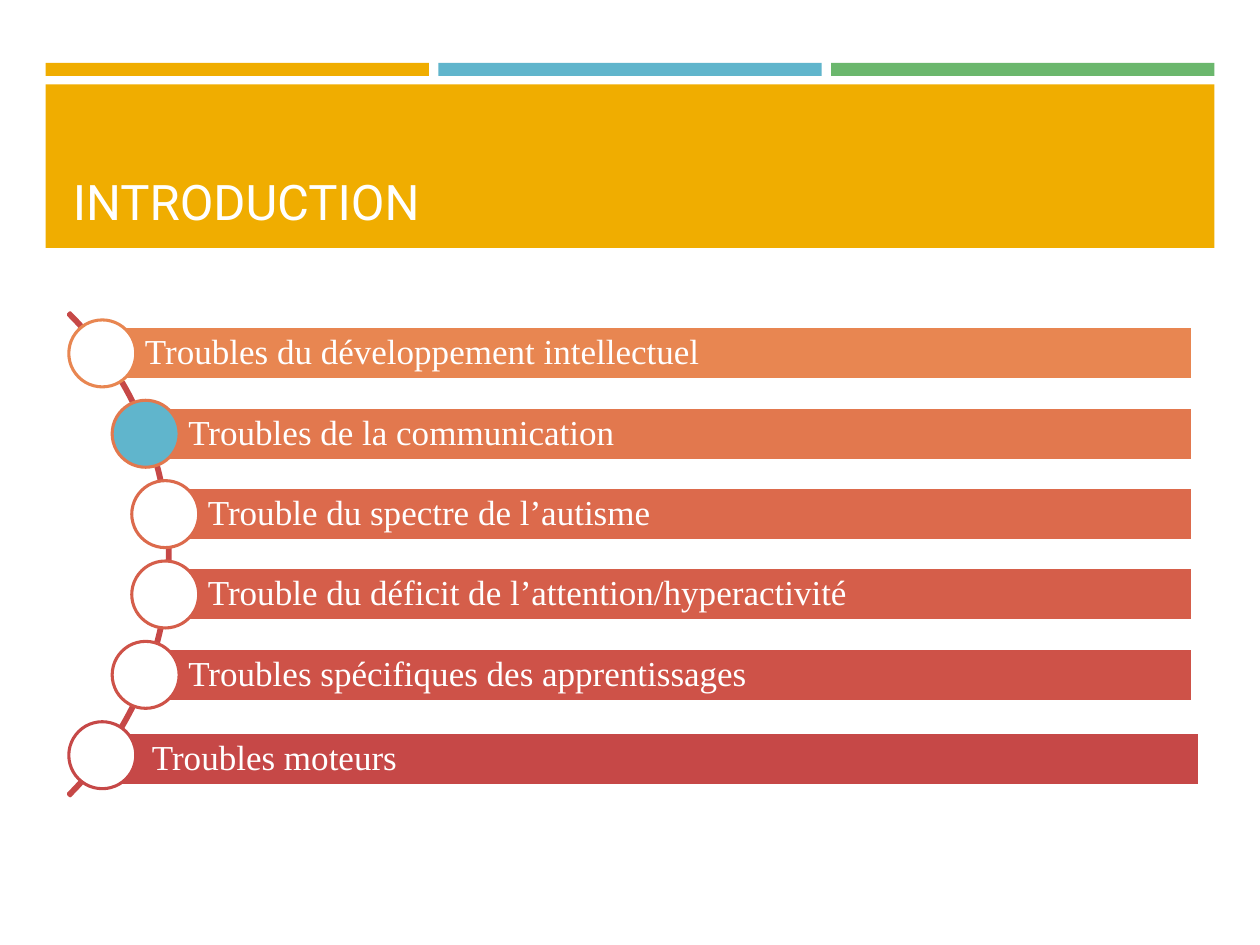
from math import sqrt

from pptx import Presentation
from pptx.dml.color import RGBColor
from pptx.enum.shapes import MSO_SHAPE
from pptx.enum.text import MSO_ANCHOR, PP_ALIGN
from pptx.util import Cm, Pt

WHITE, GOLD, BLUE, GREEN, RED = "FFFFFF", "F0AD00", "60B5CC", "6BB76D", "C64847"

# Label, bar colour, disc colour
DISORDERS = [
    ("Troubles du développement intellectuel", "E88651", WHITE),
    ("Troubles de la communication", "E2784E", BLUE),
    ("Trouble du spectre de l’autisme", "DC6A4C", WHITE),
    ("Trouble du déficit de l’attention/hyperactivité", "D55E4A", WHITE),
    ("Troubles spécifiques des apprentissages", "CE5248", WHITE),
    ("Troubles moteurs", RED, WHITE),
]


def color(value):
    return RGBColor.from_string(value)


def add_shape(page, kind, left, top, width, height, fill=None, line=None):
    shape = page.shapes.add_shape(kind, Cm(left), Cm(top), Cm(width), Cm(height))
    shape.shadow.inherit = False
    if fill:
        shape.fill.solid()
        shape.fill.fore_color.rgb = color(fill)
    else:
        shape.fill.background()
    if line:
        shape.line.color.rgb = color(line)
        shape.line.width = Pt(1.75)
    else:
        shape.line.fill.background()
    return shape


def write_text(box, text, font, size, anchor, insets, spacing=1.0):
    frame = box.text_frame
    frame.word_wrap = True
    frame.vertical_anchor = anchor
    frame.margin_left, frame.margin_top, frame.margin_right, frame.margin_bottom = map(Cm, insets)
    para = frame.paragraphs[0]
    para.alignment = PP_ALIGN.LEFT
    para.line_spacing = spacing
    span = para.add_run()
    span.text = text
    span.font.name = font
    span.font.size = Pt(size)
    span.font.color.rgb = color(WHITE)


def add_header(page, left, top, width, height):
    # Three accent strips with equal gaps
    gap, strip_height, band_offset = 0.19, 0.26, 0.43
    strip_width = (width - 2 * gap) / 3
    for index, fill in enumerate((GOLD, BLUE, GREEN)):
        add_shape(page, MSO_SHAPE.RECTANGLE, left + index * (strip_width + gap), top,
                  strip_width, strip_height, fill)
    # Title band
    band_height = height - band_offset
    add_shape(page, MSO_SHAPE.RECTANGLE, left, top + band_offset, width, band_height, GOLD)
    title = page.shapes.add_textbox(Cm(left + 0.3), Cm(top + band_offset + 0.25),
                                    Cm(width - 0.6), Cm(band_height - 0.48))
    write_text(title, "INTRODUCTION", "Roboto", 28, MSO_ANCHOR.BOTTOM, (0.25, 0.13, 0.25, 0.13))


def add_curved_list(page, left, top, diameter, right):
    radius = diameter / 2
    center_x, center_y = left + radius, top + radius
    pitch, bar_height, disc = 1.62, 1.07, 1.35

    # Arc from -45 to 45 degrees
    arc = add_shape(page, MSO_SHAPE.BLOCK_ARC, left, top, diameter, diameter, line=RED)
    for index, value in enumerate((189, 27, 0.004)):
        arc.adjustments[index] = value

    # Bars and discs, each centred on the arc
    for index, (label, bar_fill, disc_fill) in enumerate(DISORDERS):
        offset = (index - (len(DISORDERS) - 1) / 2) * pitch
        x = center_x + sqrt(radius ** 2 - offset ** 2) - 0.05
        y = center_y + offset
        # The last bar sits slightly lower and to the right
        shift_x, shift_y = (0.14, 0.07) if index == len(DISORDERS) - 1 else (0, 0)
        bar = add_shape(page, MSO_SHAPE.RECTANGLE, x + shift_x, y - bar_height / 2 + shift_y,
                        right - x, bar_height, bar_fill, WHITE)
        write_text(bar, label, "Times New Roman", 20, MSO_ANCHOR.MIDDLE,
                   (0.86, 0.15, 0.15, 0.15), spacing=0.9)
        add_shape(page, MSO_SHAPE.OVAL, x - disc / 2, y - disc / 2, disc, disc,
                  disc_fill, bar_fill)


def main():
    deck = Presentation()
    deck.slide_width, deck.slide_height = Cm(25.4), Cm(19.05)
    page = deck.slides.add_slide(deck.slide_layouts[6])
    add_header(page, 0.92, 1.27, 23.56, 3.73)
    add_curved_list(page, -10.34, 4.29, 13.77, 24.05)
    deck.save("out.pptx")


if __name__ == "__main__":
    main()
